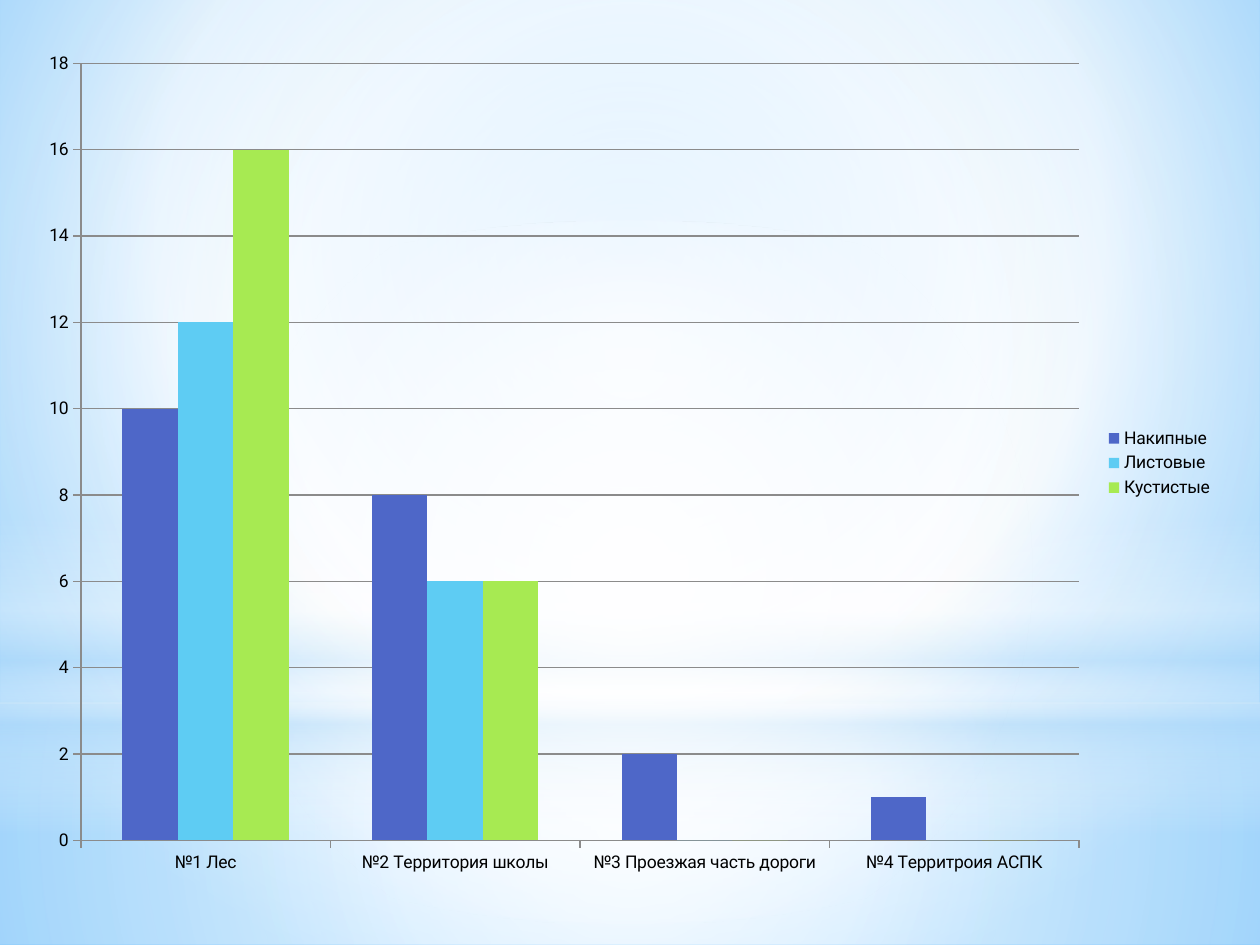
from lxml import etree
from pptx import Presentation
from pptx import util as u
from pptx.chart.data import CategoryChartData
from pptx.dml.color import RGBColor
from pptx.enum import chart as ch, shapes
from pptx.oxml.ns import qn

BLACK = RGBColor(0x00, 0x00, 0x00)
GRAY = RGBColor(0x8B, 0x8B, 0x8B)
WHITE = RGBColor(0xFF, 0xFF, 0xFF)
MIST = RGBColor(0xB4, 0xDC, 0xFA)
SKY = RGBColor(0x9E, 0xD5, 0xFF)
AZURE = RGBColor(0x5B, 0xB9, 0xFF)
INDIGO = RGBColor(0x4E, 0x67, 0xC8)
CYAN = RGBColor(0x5E, 0xCC, 0xF3)
LIME = RGBColor(0xA7, 0xEA, 0x52)


def set_gradient(fill, root, stops, center=None):
    fill.gradient()
    grad = root.find(".//" + qn("a:gradFill"))
    for child in list(grad):
        grad.remove(child)
    gs_list = etree.SubElement(grad, qn("a:gsLst"))
    for pos, color, alpha in stops:
        gs = etree.SubElement(gs_list, qn("a:gs"), pos=str(pos * 1000))
        clr = etree.SubElement(gs, qn("a:srgbClr"), val=str(color))
        etree.SubElement(clr, qn("a:alpha"), val=str(alpha * 1000))
    if center is None:
        etree.SubElement(grad, qn("a:lin"), ang="5400000", scaled="0")
    else:
        p = etree.SubElement(grad, qn("a:path"), path="circle")
        sides = {k: str(v * 1000) for k, v in zip("ltrb", center)}
        etree.SubElement(p, qn("a:fillToRect"), **sides)


prs = Presentation()
prs.slide_width, prs.slide_height = u.Inches(10), u.Inches(7.5)
s = prs.slides.add_slide(prs.slide_layouts[6])
set_gradient(s.background.fill, s._element,
             [(0, SKY, 100), (60, WHITE, 100), (100, AZURE, 100)], (20, 10, 20, 60))

RECT, OVAL = shapes.MSO_SHAPE.RECTANGLE, shapes.MSO_SHAPE.OVAL
MIDDLE = (50, 50, 50, 50)
glows = [
    (RECT, 5.58, 1.92, [(0, WHITE, 91), (37, WHITE, 76), (100, MIST, 79)], MIDDLE),
    (RECT, 0, 5.58, [(0, WHITE, 89), (48, WHITE, 62), (100, MIST, 79)], MIDDLE),
    (RECT, 4.12, 2.5, [(0, WHITE, 0), (29, WHITE, 30), (45, MIST, 40),
                       (55, WHITE, 26), (65, MIST, 60), (100, WHITE, 0)], None),
    (OVAL, 1.75, 5.58, [(0, WHITE, 100), (56, WHITE, 0)], MIDDLE),
]
for kind, top, height, stops, center in glows:
    sp = s.shapes.add_shape(kind, 0, u.Inches(top), u.Inches(10), u.Inches(height))
    sp.shadow.inherit = False
    sp.line.fill.background()
    set_gradient(sp.fill, sp._element.spPr, stops, center)

data = CategoryChartData()
data.categories = ["№1 Лес", "№2 Территория школы",
                   "№3 Проезжая часть дороги", "№4 Территроия АСПК"]
series = [("Накипные", (10, 8, 2, 1), INDIGO),
          ("Листовые ", (12, 6, 0, 0), CYAN),
          ("Кустистые", (16, 6, 0, 0), LIME)]
for name, values, color in series:
    data.add_series(name, values)

chart = s.shapes.add_chart(ch.XL_CHART_TYPE.COLUMN_CLUSTERED, u.Inches(0.2), u.Inches(0.29),
                           u.Inches(9.53), u.Inches(6.77), data).chart
chart.has_title = False
chart.has_legend = True
chart.font.color.rgb = BLACK
plot = chart.plots[0]
cat, val = chart.category_axis, chart.value_axis
val.has_major_gridlines = True

formats = [
    (chart.font, {"name": "Roboto", "size": u.Pt(10)}),
    (chart.legend, {"position": ch.XL_LEGEND_POSITION.RIGHT, "include_in_layout": False}),
    (plot, {"gap_width": 150, "overlap": 0, "vary_by_categories": False}),
    (cat, {"major_tick_mark": ch.XL_TICK_MARK.OUTSIDE}),
    (val, {"major_tick_mark": ch.XL_TICK_MARK.OUTSIDE, "minimum_scale": 0,
           "maximum_scale": 18, "major_unit": 2}),
]
for obj, values in formats:
    for key, value in values.items():
        setattr(obj, key, value)

for part in (cat, val, val.major_gridlines):
    part.format.line.color.rgb = GRAY
    part.format.line.width = u.Pt(0.75)

for ser, (name, values, color) in zip(plot.series, series):
    ser.format.fill.solid()
    ser.format.fill.fore_color.rgb = color

prs.save("out.pptx")
